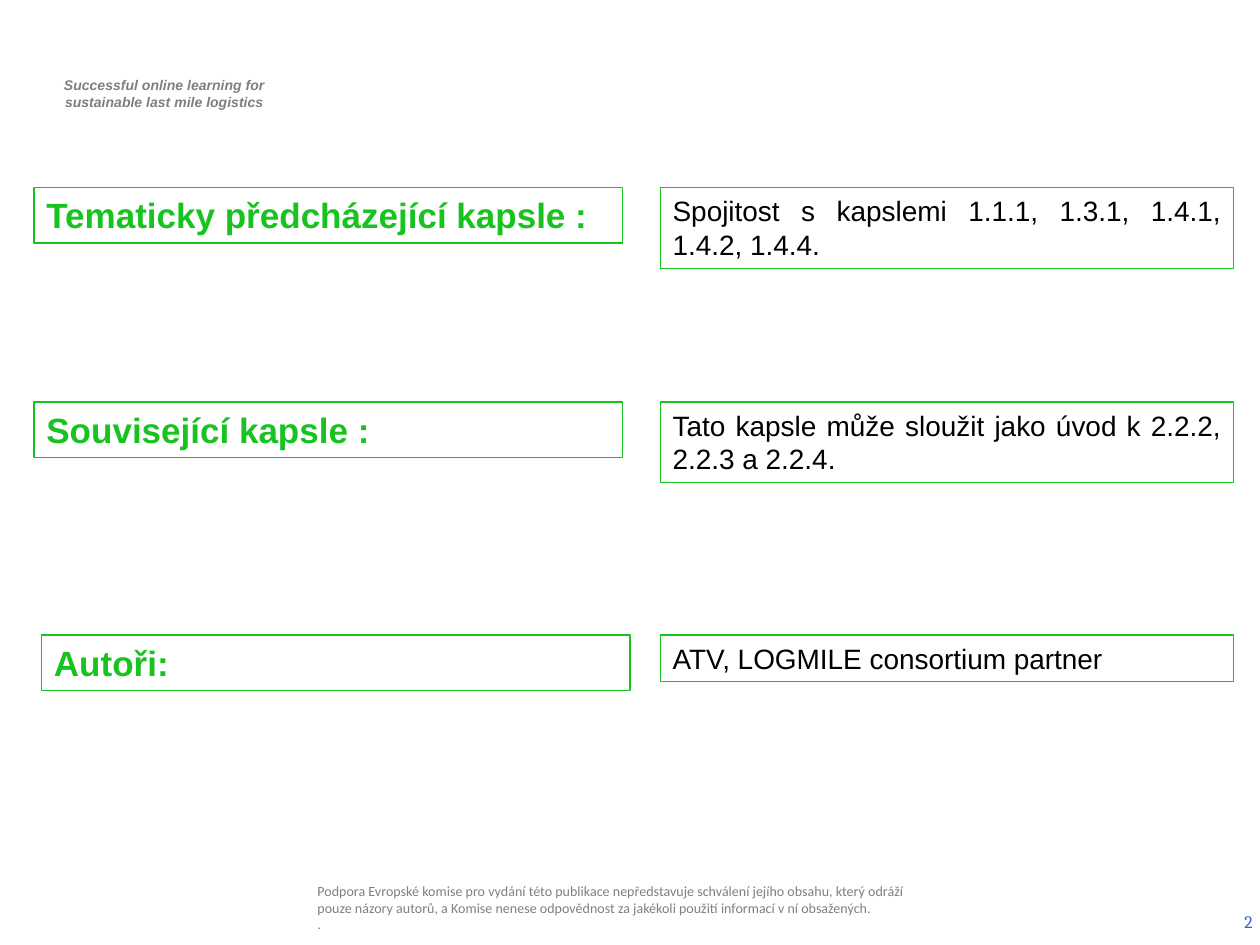
from dataclasses import dataclass

from pptx import Presentation
from pptx.dml.color import RGBColor
from pptx.enum.shapes import MSO_SHAPE
from pptx.enum.text import MSO_ANCHOR, PP_ALIGN
from pptx.util import Inches, Pt

RECT = MSO_SHAPE.RECTANGLE
TOP, MIDDLE = MSO_ANCHOR.TOP, MSO_ANCHOR.MIDDLE
LEFT, CENTER, RIGHT, JUSTIFY = (
    PP_ALIGN.LEFT, PP_ALIGN.CENTER, PP_ALIGN.RIGHT, PP_ALIGN.JUSTIFY)
BLANK_LAYOUT = 6
WIDTH, HEIGHT = 10, 7.5


@dataclass(frozen=True)
class Style:
    size: float
    color: str
    font: str = "Arial"
    bold: bool = False
    italic: bool = False


class Theme:
    paper, green = "FFFFFF", "18C320"
    border = 0.75
    label = Style(20, green, bold=True)
    body = Style(16, "000000")
    tagline = Style(8, "7F7F7F", bold=True, italic=True)
    notice = Style(8, "7F7F7F", "Calibri")
    notice_end = Style(7.5, "666666")
    number = Style(10, "3366CC", "Cambria")


LABEL_WIDTH, LABEL_HEIGHT = 4.67, 0.44
BODY_LEFT, BODY_WIDTH = 5.24, 4.55

# Label left, row top, label, body height, body alignment, body
ROWS = [
    (0.27, 1.49, "Tematicky předcházející kapsle :", 0.64, JUSTIFY,
     "Spojitost s kapslemi 1.1.1, 1.3.1, 1.4.1, 1.4.2, 1.4.4."),
    (0.27, 3.19, "Související kapsle :", 0.64, JUSTIFY,
     "Tato kapsle může sloužit jako úvod k 2.2.2, 2.2.3 a 2.2.4."),
    (0.33, 5.04, "Autoři:", 0.37, LEFT,
     "ATV, LOGMILE consortium partner"),
]
TAGLINE = ["Successful online learning for", "sustainable last mile logistics"]
NOTICE = ("Podpora Evropské komise pro vydání této publikace nepředstavuje "
          "schválení jejího obsahu, který odráží pouze názory autorů, a Komise "
          "nenese odpovědnost za jakékoli použití informací v ní obsažených.")


def write(sp, lines, align=LEFT, anchor=TOP, inset=(0.1, 0.05)):
    """Fill a shape with (text, style) paragraphs."""
    tf = sp.text_frame
    tf.word_wrap = True
    tf.vertical_anchor = anchor
    tf.margin_left = tf.margin_right = Inches(inset[0])
    tf.margin_top = tf.margin_bottom = Inches(inset[1])
    for i, (text, style) in enumerate(lines):
        p = tf.add_paragraph() if i else tf.paragraphs[0]
        p.alignment = align
        r = p.add_run()
        r.text = text
        r.font.name = style.font
        r.font.size = Pt(style.size)
        r.font.bold = style.bold
        r.font.italic = style.italic
        r.font.color.rgb = RGBColor.from_string(style.color)


def add_text(s, box, lines, **layout):
    write(s.shapes.add_textbox(*map(Inches, box)), lines, **layout)


def add_frame(s, box, text, style, align=LEFT):
    """Add a white box with a green border."""
    sp = s.shapes.add_shape(RECT, *map(Inches, box))
    sp.shadow.inherit = False
    sp.fill.solid()
    sp.fill.fore_color.rgb = RGBColor.from_string(Theme.paper)
    sp.line.color.rgb = RGBColor.from_string(Theme.green)
    sp.line.width = Pt(Theme.border)
    write(sp, [(text, style)], align)


def add_header(s, box):
    add_text(s, box, [(line, Theme.tagline) for line in TAGLINE], align=CENTER)


def add_row(s, left, top, label, body_height, align, body):
    add_frame(s, (left, top, LABEL_WIDTH, LABEL_HEIGHT), label, Theme.label)
    add_frame(s, (BODY_LEFT, top, BODY_WIDTH, body_height), body,
              Theme.body, align)


def add_footer(s, notice_box, number_box):
    add_text(s, notice_box, [(NOTICE, Theme.notice), (".", Theme.notice_end)],
             anchor=MIDDLE, inset=(0.04, 0.04))
    add_text(s, number_box, [("2", Theme.number)], align=RIGHT, anchor=MIDDLE,
             inset=(0.06, 0.05))


def main():
    prs = Presentation()
    prs.slide_width, prs.slide_height = Inches(WIDTH), Inches(HEIGHT)
    s = prs.slides.add_slide(prs.slide_layouts[BLANK_LAYOUT])
    add_header(s, (0.29, 0.56, 2.03, 0.37))
    for row in ROWS:
        add_row(s, *row)
    add_footer(s, (2.48, 6.95, 4.97, 0.5), (7.71, 7.13, WIDTH - 7.71, 0.37))
    prs.save("out.pptx")


if __name__ == "__main__":
    main()
